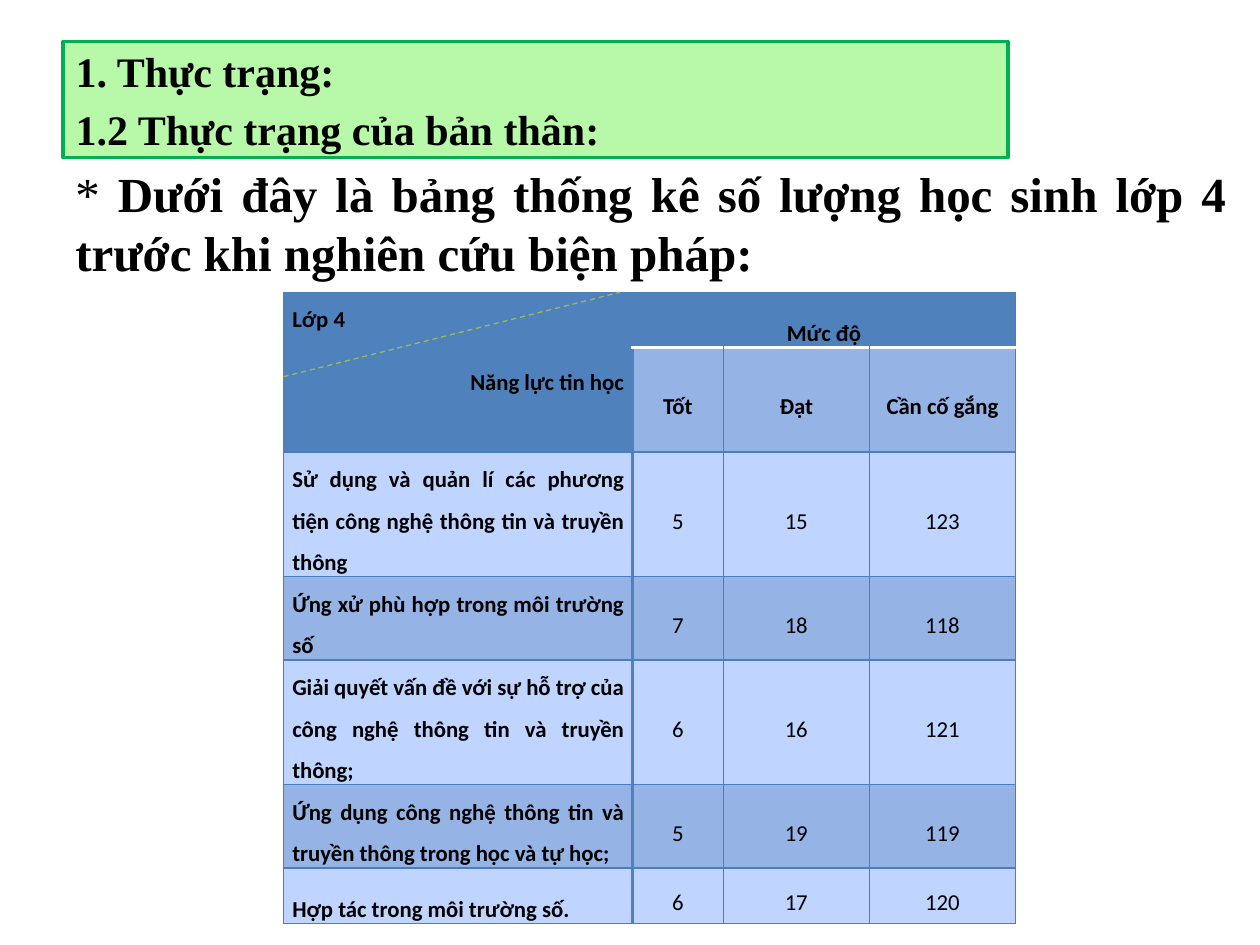
from lxml import etree
from pptx import Presentation
from pptx.dml.color import RGBColor
from pptx.enum.dml import MSO_LINE
from pptx.enum.shapes import MSO_CONNECTOR
from pptx.enum.text import MSO_ANCHOR, MSO_AUTO_SIZE, PP_ALIGN
from pptx.oxml.ns import qn
from pptx.util import Inches, Pt

BLACK = RGBColor(0x00, 0x00, 0x00)
WHITE = RGBColor(0xFF, 0xFF, 0xFF)
MINT = RGBColor(0xB8, 0xF9, 0xA9)
GREEN = RGBColor(0x00, 0xB0, 0x50)
OLIVE = RGBColor(0x9B, 0xBB, 0x59)
BLUE = RGBColor(0x4F, 0x81, 0xBD)
GRID = RGBColor(0x4B, 0x7E, 0xBC)
BAND_DARK = RGBColor(0x95, 0xB3, 0xE4)
BAND_LIGHT = RGBColor(0xBF, 0xD4, 0xFF)

SERIF = "Times New Roman"
SANS = "Calibri"

COL_WIDTHS = [2.77, 0.72, 1.16, 1.16]
ROW_HEIGHTS = [0.43, 0.42, 0.97, 0.65, 0.97, 0.65, 0.43]
LEVELS = ["Tốt", "Đạt", "Cần cố gắng"]
SKILLS = [
    ("Sử dụng và quản lí các phương tiện công nghệ thông tin và truyền thông", 5, 15, 123),
    ("Ứng xử phù hợp trong môi trường số", 7, 18, 118),
    ("Giải quyết vấn đề với sự hỗ trợ của công nghệ thông tin và truyền thông;", 6, 16, 121),
    ("Ứng dụng công nghệ thông tin và truyền thông trong học và tự học;", 5, 19, 119),
    ("Hợp tác trong môi trường số.", 6, 17, 120),
]


def add_text(tf, text, size=13, font=SANS, bold=False, align=PP_ALIGN.LEFT,
             spacing=None, gap=0, first=True):
    p = tf.paragraphs[0] if first else tf.add_paragraph()
    p.alignment = align
    p.space_before = Pt(0 if first else gap)
    p.space_after = Pt(gap)
    if spacing:
        p.line_spacing = spacing
    add_run(p, text, size, font, bold)
    return p


def add_run(p, text, size, font, bold):
    r = p.add_run()
    r.text = text
    r.font.size = Pt(size)
    r.font.name = font
    r.font.bold = bold
    r.font.color.rgb = BLACK


def add_title(s, left, top, width, height):
    sp = s.shapes.title
    sp.left, sp.top, sp.width, sp.height = map(Inches, (left, top, width, height))
    geom = etree.SubElement(sp._element.spPr, qn("a:prstGeom"), prst="roundRect")
    etree.SubElement(geom, qn("a:avLst"))
    sp.fill.solid()
    sp.fill.fore_color.rgb = MINT
    sp.line.color.rgb = GREEN
    sp.line.width = Pt(2)
    tf = sp.text_frame
    tf.auto_size = MSO_AUTO_SIZE.NONE
    tf.vertical_anchor = MSO_ANCHOR.MIDDLE
    for i, text in enumerate(["1. Thực trạng:", "1.2 Thực trạng của bản thân:"]):
        add_text(tf, text, size=24, font=SERIF, bold=True, gap=2, first=i == 0)


def add_intro(s, left, top, width, height):
    sp = s.shapes.add_textbox(*map(Inches, (left, top, width, height)))
    tf = sp.text_frame
    tf.word_wrap = True
    tf.auto_size = MSO_AUTO_SIZE.SHAPE_TO_FIT_TEXT
    p = add_text(tf, "*", size=28, font=SERIF, align=PP_ALIGN.JUSTIFY, gap=3)
    add_run(p, " Dưới đây là bảng thống kê số lượng học sinh lớp 4 "
               "trước khi nghiên cứu biện pháp:", 28, SERIF, True)


def set_borders(cell, **special):
    tcPr = cell._tc.get_or_add_tcPr()
    for side in "LRTB":
        color, width = special.get(side, (GRID, 0.75))
        ln = etree.SubElement(tcPr, qn(f"a:ln{side}"), w=str(Pt(width)))
        fill = etree.SubElement(ln, qn("a:solidFill"))
        etree.SubElement(fill, qn("a:srgbClr"), val=str(color))


def format_cell(cell, color, anchor=MSO_ANCHOR.MIDDLE, **borders):
    cell.margin_left = cell.margin_right = Inches(0.07)
    cell.margin_top = cell.margin_bottom = 0
    cell.vertical_anchor = anchor
    set_borders(cell, **borders)
    cell.fill.solid()
    cell.fill.fore_color.rgb = color


def add_header(table):
    white, thick = (WHITE, 2), (BLUE, 2)
    table.cell(0, 0).merge(table.cell(1, 0))
    table.cell(0, 1).merge(table.cell(0, 3))
    for row in range(2):
        format_cell(table.cell(row, 0), BLUE, MSO_ANCHOR.TOP, R=thick)
    for col in range(1, 4):
        format_cell(table.cell(0, col), BLUE, MSO_ANCHOR.TOP, L=thick, B=white)

    tf = table.cell(0, 0).text_frame
    add_text(tf, "Lớp 4", bold=True, spacing=1.5, gap=6)
    add_text(tf, "Năng lực tin học", bold=True, align=PP_ALIGN.RIGHT,
             spacing=1.5, gap=6, first=False)
    add_text(table.cell(0, 1).text_frame, "Mức độ", bold=True,
             align=PP_ALIGN.CENTER, spacing=2.0, gap=6)
    for col, level in enumerate(LEVELS, 1):
        cell = table.cell(1, col)
        left = {"L": thick} if col == 1 else {}
        format_cell(cell, BAND_DARK, T=white, **left)
        add_text(cell.text_frame, level, bold=True, align=PP_ALIGN.CENTER,
                 spacing=1.5, gap=6)


def add_skill_row(table, row, skill, counts):
    color = BAND_DARK if row % 2 else BAND_LIGHT
    thick = (BLUE, 2)
    cell = table.cell(row, 0)
    format_cell(cell, color, MSO_ANCHOR.TOP, R=thick)
    last = row == len(ROW_HEIGHTS) - 1
    add_text(cell.text_frame, skill, bold=True, align=PP_ALIGN.JUSTIFY,
             spacing=2.0 if last else 1.5, gap=6)
    for col, count in enumerate(counts, 1):
        cell = table.cell(row, col)
        left = {"L": thick} if col == 1 else {}
        format_cell(cell, color, **left)
        add_text(cell.text_frame, str(count), align=PP_ALIGN.CENTER,
                 spacing=1.5, gap=6)


def add_skill_table(s, left, top, width, height):
    frame = s.shapes.add_table(len(ROW_HEIGHTS), len(COL_WIDTHS),
                               *map(Inches, (left, top, width, height)))
    table = frame.table
    for col, w in zip(table.columns, COL_WIDTHS):
        col.width = Inches(w)
    for row, h in zip(table.rows, ROW_HEIGHTS):
        row.height = Inches(h)
    add_header(table)
    for row, (skill, *counts) in enumerate(SKILLS, 2):
        add_skill_row(table, row, skill, counts)


def add_diagonal(s, left, top, width, height):
    line = s.shapes.add_connector(MSO_CONNECTOR.STRAIGHT, Inches(left), Inches(top + height),
                                  Inches(left + width), Inches(top))
    line.line.color.rgb = OLIVE
    line.line.width = Pt(0.75)
    line.line.dash_style = MSO_LINE.DASH
    etree.SubElement(line._element.spPr, qn("a:effectLst"))


def main():
    prs = Presentation()
    prs.slide_width, prs.slide_height = Inches(10), Inches(7.5)
    s = prs.slides.add_slide(prs.slide_layouts[5])
    add_title(s, 0.5, 0.33, 7.5, 0.92)
    add_skill_table(s, 2.25, 2.32, 5.81, 4.52)
    add_diagonal(s, 2.25, 2.32, 2.67, 0.67)
    add_intro(s, 0.5, 1.25, 9.33, 1.04)
    prs.save("out.pptx")


if __name__ == "__main__":
    main()
